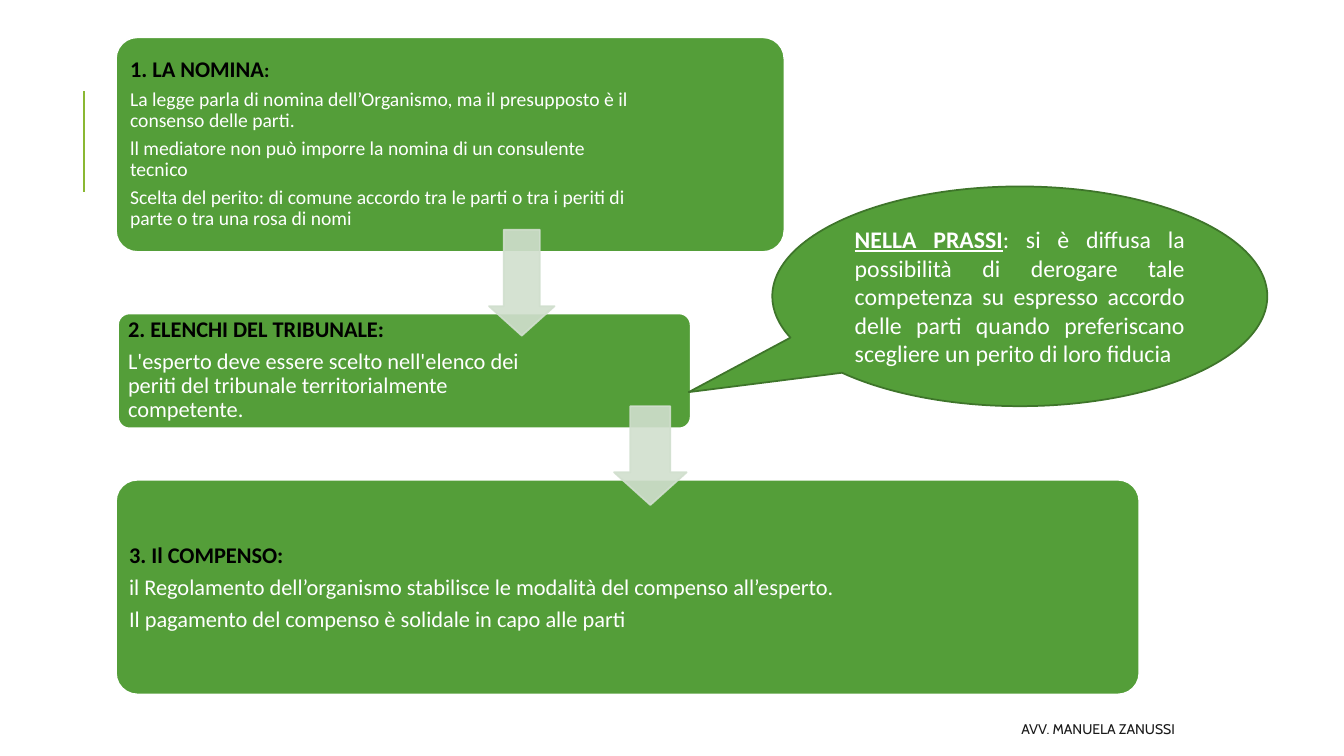
"""Build the slide on appointing and paying the mediation expert."""
from dataclasses import dataclass

from lxml.etree import SubElement
from pptx import Presentation
from pptx.dml.color import RGBColor
from pptx.enum.shapes import MSO_CONNECTOR, MSO_SHAPE
from pptx.enum.text import MSO_ANCHOR, PP_ALIGN
from pptx.oxml.ns import qn
from pptx.util import Inches, Pt

COLOURS = {
    "green": "549E39",
    "dark_green": "3E752A",
    "pale_green": "D1DFCE",
    "lime": "8AB833",
    "white": "FFFFFF",
    "black": "000000",
    "ink": "1A1A1A",
}


@dataclass
class Frame:
    """Left, top, width and height in inches."""
    left: float
    top: float
    width: float
    height: float

    def lengths(self):
        return [Inches(n) for n in (self.left, self.top, self.width, self.height)]


@dataclass
class Step:
    """A numbered step with its panel, text area and wording."""
    panel: Frame
    area: Frame
    heading: str
    lines: list[str]
    size: int = 16


STEPS = [
    Step(Frame(1.15, 0.37, 6.63, 2.13), Frame(1.22, 0.43, 5.14, 2), "1. LA NOMINA", [
        "La legge parla di nomina dell’Organismo, ma il presupposto è il consenso delle parti.",
        "ll mediatore non può imporre la nomina di un consulente tecnico",
        "Scelta del perito: di comune accordo tra le parti o tra i periti di parte o tra una rosa di nomi",
    ], 14),
    Step(Frame(1.17, 3.11, 5.68, 1.14), Frame(1.2, 3.14, 4.37, 1.07), "2. ELENCHI DEL TRIBUNALE", [
        "L'esperto deve essere scelto nell'elenco dei periti del tribunale territorialmente competente.",
    ]),
    Step(Frame(1.15, 4.76, 10.15, 2.13), Frame(1.21, 4.83, 7.8, 2.01), "3. Il COMPENSO", [
        "il Regolamento dell’organismo stabilisce le modalità del compenso all’esperto.",
        "Il pagamento del compenso è solidale in capo alle parti",
    ]),
]
ARROWS = [Frame(4.85, 2.28, 0.65, 1.05), Frame(6.09, 4.03, 0.72, 0.98)]


def colour(name: str) -> RGBColor:
    """Return the named colour."""
    return RGBColor.from_string(COLOURS[name])


def add_figure(page, kind, frame: Frame, adjustments, fill: str, line: str, opacity: int = 100):
    """Draw a preset shape with a fill and an outline."""
    figure = page.shapes.add_shape(kind, *frame.lengths())
    figure.shadow.inherit = False
    for index, value in enumerate(adjustments):
        figure.adjustments[index] = value
    figure.line.width = Pt(1.25)
    for paint, name in ((figure.fill, fill), (figure.line.fill, line)):
        paint.solid()
        paint.fore_color.rgb = colour(name)
    if opacity < 100:
        for tint in figure._element.spPr.iter(qn("a:srgbClr")):
            SubElement(tint, qn("a:alpha"), val=str(opacity * 1000))
    return figure


def add_text_area(page, frame: Frame, margin: float | None = None):
    """Add a wrapping, vertically centred text box and return its text frame."""
    box = page.shapes.add_textbox(*frame.lengths()).text_frame
    box.word_wrap = True
    box.vertical_anchor = MSO_ANCHOR.MIDDLE
    if margin is not None:
        box.margin_left = box.margin_right = Inches(margin)
        box.margin_top = box.margin_bottom = Inches(margin)
    return box


def add_span(para, text: str, *, size: float, tint: str = "white", font: str = "Calibri",
             bold: bool = False, underline: bool = False) -> None:
    """Append formatted text to a paragraph."""
    span = para.add_run()
    span.text = text
    span.font.name = font
    span.font.size = Pt(size)
    span.font.bold = bold
    span.font.underline = underline
    span.font.color.rgb = colour(tint)


def add_step(page, step: Step) -> None:
    """Draw a step panel with its heading and lines."""
    add_figure(page, MSO_SHAPE.ROUNDED_RECTANGLE, step.panel, [0.1], "green", "white")
    box = add_text_area(page, step.area, 0.07)
    heading = box.paragraphs[0]
    add_span(heading, step.heading, size=16, tint="black", bold=True)
    add_span(heading, ":", size=step.size, tint="black", bold=True)
    for line in step.lines:
        add_span(box.add_paragraph(), line, size=step.size)
    for para in box.paragraphs:
        para.line_spacing = 0.9
        para.space_after = Pt(0.35 * step.size)


def add_callout(page) -> None:
    """Draw the speech bubble about common practice."""
    bubble = add_figure(page, MSO_SHAPE.OVAL_CALLOUT, Frame(7.66, 1.85, 4.91, 2.18),
                        [-0.669, 0.436], "green", "dark_green")
    bubble.text_frame.word_wrap = True
    bubble.text_frame.vertical_anchor = MSO_ANCHOR.MIDDLE
    para = bubble.text_frame.paragraphs[0]
    para.alignment = PP_ALIGN.JUSTIFY
    add_span(para, "NELLA PRASSI", size=17, bold=True, underline=True)
    add_span(para, ": si è diffusa la possibilità di derogare tale competenza su espresso "
             "accordo delle parti quando preferiscano scegliere un perito di loro fiducia", size=17)


def add_accent(page) -> None:
    """Draw the vertical accent line."""
    accent = page.shapes.add_connector(MSO_CONNECTOR.STRAIGHT, Inches(0.83), Inches(1.9),
                                       Inches(0.83), Inches(0.9))
    accent.line.color.rgb = colour("lime")
    accent.line.width = Pt(1.5)
    SubElement(accent._element.spPr, qn("a:effectLst"))


def add_footer(page) -> None:
    """Write the author line at the bottom."""
    para = add_text_area(page, Frame(5.3, 7.08, 6.45, 0.3)).paragraphs[0]
    para.alignment = PP_ALIGN.RIGHT
    add_span(para, "AVV. MANUELA ZANUSSI", size=10, tint="ink", font="Cabin")


def main() -> None:
    """Build and save the deck."""
    deck = Presentation()
    deck.slide_width, deck.slide_height = Inches(13.33), Inches(7.5)
    page = deck.slides.add_slide(deck.slide_layouts.get_by_name("Blank"))
    add_accent(page)
    for step in STEPS:
        add_step(page, step)
    for frame in ARROWS:
        add_figure(page, MSO_SHAPE.DOWN_ARROW, frame, [0.55, 0.45], "pale_green", "pale_green", 90)
    add_callout(page)
    add_footer(page)
    deck.save("out.pptx")


if __name__ == "__main__":
    main()
